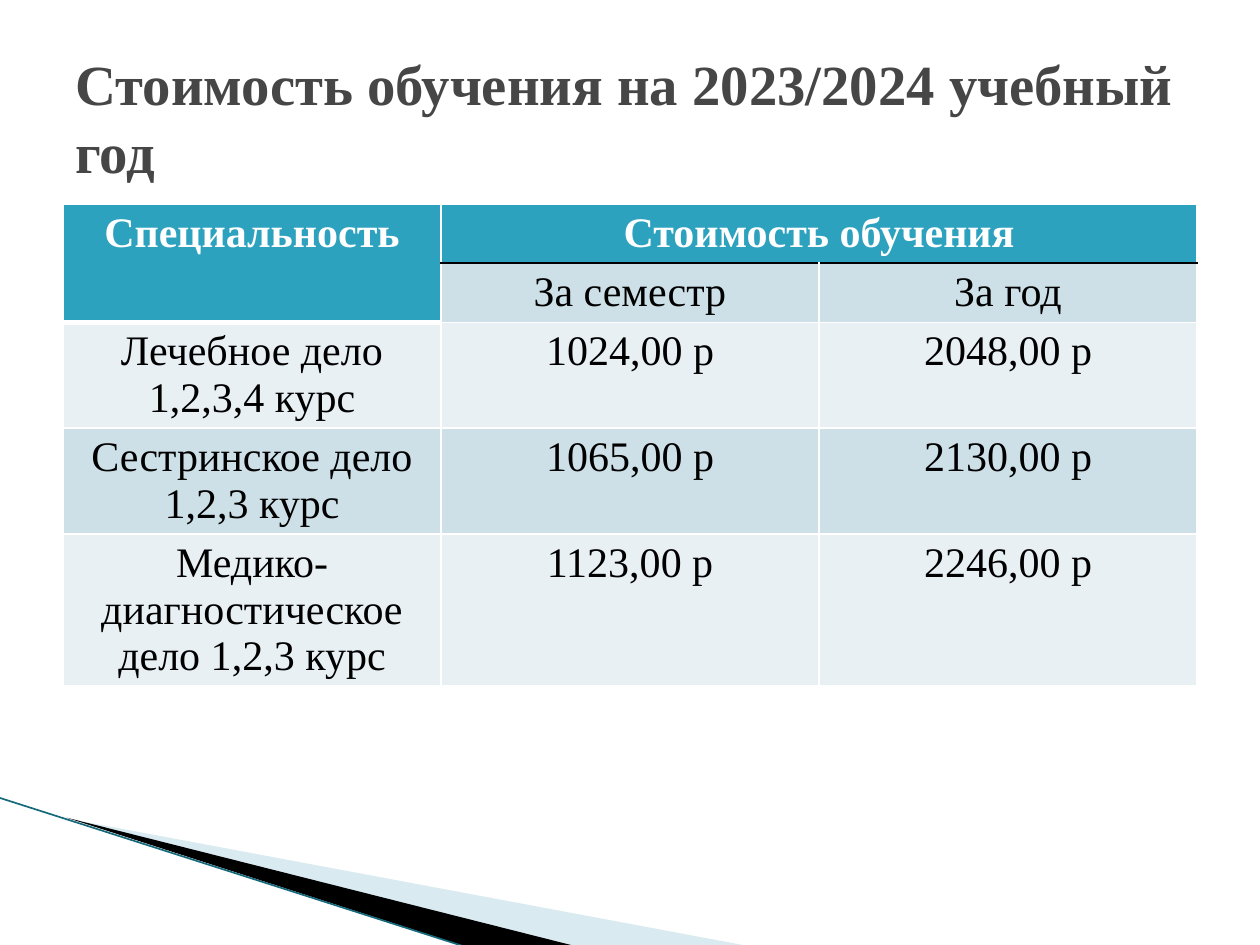
from lxml import etree
from pptx import Presentation
from pptx.dml.color import RGBColor
from pptx.enum import text
from pptx.oxml import ns
from pptx.util import Inches, Pt

FONT = "Times New Roman"
COLORS = {"title": "464646", "header": "2DA2BF", "dark": "CDE0E8", "light": "E8F0F4",
          "white": "FFFFFF", "black": "000000", "wedge": "A0CBDC", "edge": "15697B"}
TITLE = "Стоимость обучения на 2023/2024 учебный год"
ROWS = [
    ("Специальность", "Стоимость обучения", ""),
    ("", "За семестр", "За год"),
    ("Лечебное дело 1,2,3,4 курс", "1024,00 р", "2048,00 р"),
    ("Сестринское дело 1,2,3 курс", "1065,00 р", "2130,00 р"),
    ("Медико-диагностическое дело 1,2,3 курс", "1123,00 р", "2246,00 р"),
]
HEIGHTS = [0.46, 0.46, 0.84, 0.84, 1.2]
WEDGES = [
    ([(0.55, 6.5), (5.95, 7.51), (4.56, 7.51)], "wedge", 40),
    ([(0.53, 6.49), (4.57, 7.51), (3.72, 7.52)], "black", 100),
]


def rgb(name):
    return RGBColor.from_string(COLORS[name])


def add_run(para, words, size, color, bold):
    span = para.add_run()
    span.text = words
    font = span.font
    font.name, font.size, font.bold = FONT, Pt(size), bold
    font.color.rgb = rgb(color)


def add_wedge(page, points, color, opacity):
    builder = page.shapes.build_freeform(*map(Inches, points[0]), scale=1.0)
    builder.add_line_segments([tuple(map(Inches, point)) for point in points[1:]])
    wedge = builder.convert_to_shape()
    wedge.shadow.inherit = False
    wedge.line.fill.background()
    wedge.fill.solid()
    wedge.fill.fore_color.rgb = rgb(color)
    if opacity < 100:
        tint = wedge.fill._xPr.find(".//" + ns.qn("a:srgbClr"))
        etree.SubElement(tint, ns.qn("a:alpha"), val=str(opacity * 1000))


def set_borders(cell, row, column):
    properties = cell._tc.get_or_add_tcPr()
    for index, side in enumerate("LRTB"):
        under_header = column > 0 and (row, side) in [(0, "B"), (1, "T")]
        under_specialty = column == 0 and (row, side) in [(0, "B"), (1, "B"), (2, "T")]
        line = etree.Element(ns.qn("a:ln" + side), w=str(Pt(3 if under_specialty else 1)))
        fill = etree.SubElement(line, ns.qn("a:solidFill"))
        color = COLORS["black" if under_header else "white"]
        etree.SubElement(fill, ns.qn("a:srgbClr"), val=color)
        properties.insert(index, line)


def add_price_table(page):
    frame = page.shapes.add_table(len(ROWS), 3, Inches(0.5), Inches(1.62),
                                  Inches(9), Inches(sum(HEIGHTS)))
    table = frame.table
    for row, (height, words) in enumerate(zip(HEIGHTS, ROWS)):
        table.rows[row].height = Inches(height)
        for column, word in enumerate(words):
            cell = table.cell(row, column)
            header = row == 0 or (row == 1 and column == 0)
            cell.fill.solid()
            cell.fill.fore_color.rgb = rgb("header" if header else "dark" if row % 2 else "light")
            set_borders(cell, row, column)
            if word:
                para = cell.text_frame.paragraphs[0]
                para.alignment = text.PP_ALIGN.CENTER
                add_run(para, word, 24, "white" if header else "black", header)
    table.cell(0, 0).merge(table.cell(1, 0))
    table.cell(0, 1).merge(table.cell(0, 2))


def main():
    """Build the tuition price slide."""
    deck = Presentation()
    deck.slide_width, deck.slide_height = Inches(10), Inches(7.5)
    page = deck.slides.add_slide(deck.slide_layouts[5])
    for points, color, opacity in WEDGES:
        add_wedge(page, points, color, opacity)
    edge = page.shapes.add_connector(1, Inches(-0.01), Inches(6.33), Inches(3.71), Inches(7.52))
    edge.line.color.rgb = rgb("edge")
    edge.line.width = Pt(0.95)
    etree.SubElement(edge._element.spPr, ns.qn("a:effectLst"))
    add_price_table(page)
    title = page.shapes.title
    title.left, title.top, title.width, title.height = map(Inches, (0.5, 0.3, 9, 1.25))
    frame = title.text_frame
    frame.word_wrap = True
    frame.auto_size = text.MSO_AUTO_SIZE.NONE
    frame.vertical_anchor = text.MSO_ANCHOR.MIDDLE
    para = frame.paragraphs[0]
    para.alignment = text.PP_ALIGN.LEFT
    add_run(para, TITLE, 32.4, "title", True)
    deck.save("out.pptx")


if __name__ == "__main__":
    main()
